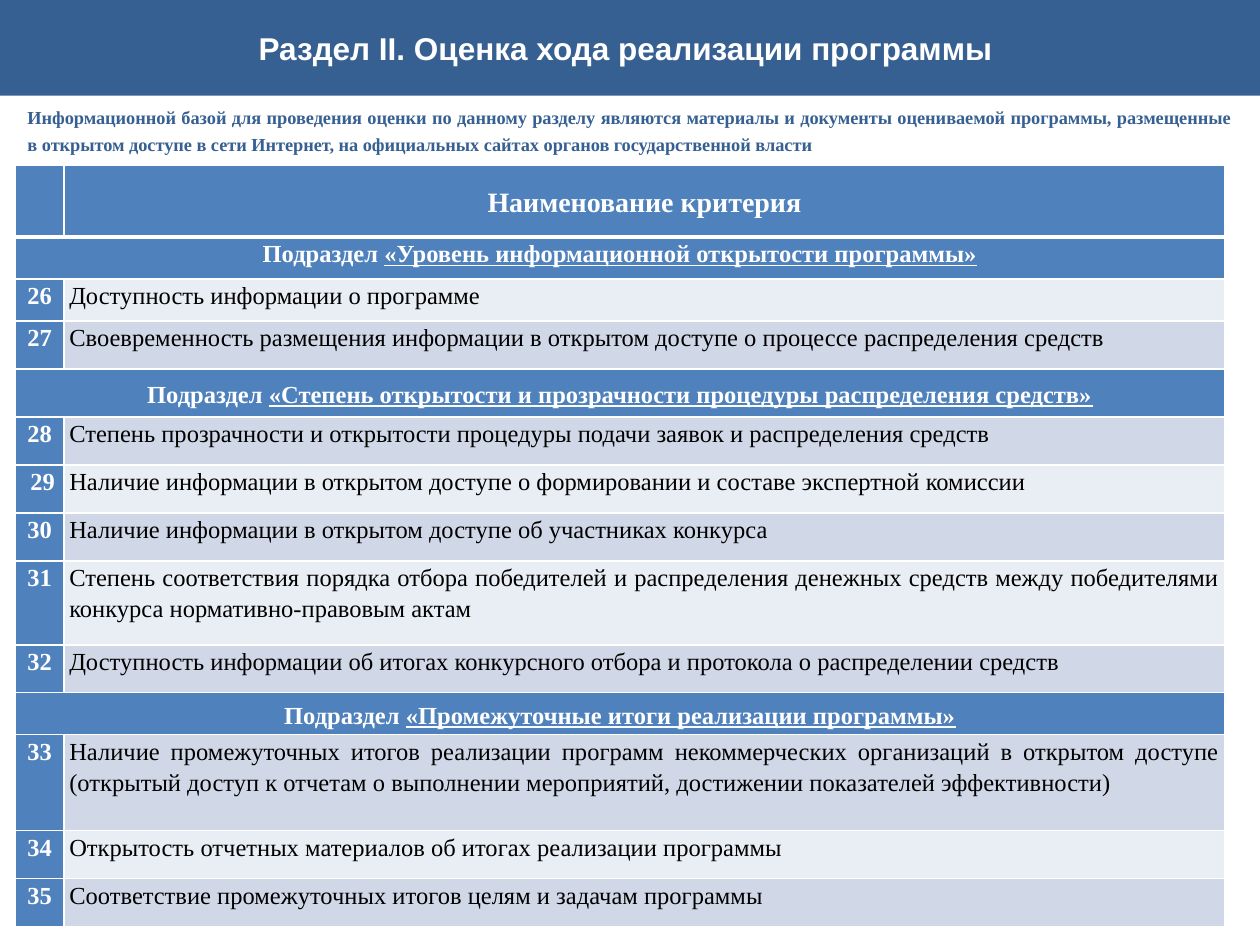
import pptx
import pptx.util
import pptx.dml.color
import pptx.enum.shapes
import pptx.enum.text
import pptx.oxml
import pptx.oxml.ns

Inches, Pt = pptx.util.Inches, pptx.util.Pt
RGBColor = pptx.dml.color.RGBColor
ALIGN, ANCHOR = pptx.enum.text.PP_ALIGN, pptx.enum.text.MSO_ANCHOR

NAVY = RGBColor(0x37, 0x60, 0x92)
BLUE = RGBColor(0x4F, 0x81, 0xBD)
PALE = RGBColor(0xE9, 0xED, 0xF4)
MIST = RGBColor(0xD0, 0xD8, 0xE8)
WHITE = RGBColor(0xFF, 0xFF, 0xFF)
BLACK = RGBColor(0, 0, 0)

SERIF = "Times New Roman"
ROW_UNIT = 1 / 21  # inches; row heights are whole numbers of these
HEADER_UNITS = 12

# Subsections: (name, row units, anchor, paragraph spacing, criteria)
# Criteria: (number, wording, row units)
SUBSECTIONS = [
    ("«Уровень информационной открытости программы»", 7, ANCHOR.TOP, 12, [
        ("26", "Доступность информации о программе", 7),
        ("27", "Своевременность размещения информации в открытом доступе о процессе "
               "распределения средств", 8),
    ]),
    ("«Степень открытости и прозрачности процедуры распределения средств»", 8, ANCHOR.MIDDLE, 10, [
        ("28", "Степень прозрачности и открытости процедуры подачи заявок и распределения средств", 8),
        (" 29", "Наличие информации в открытом доступе о формировании и составе экспертной комиссии", 8),
        ("30", "Наличие информации в открытом доступе об участниках конкурса", 8),
        ("31", "Степень соответствия порядка отбора победителей и распределения денежных средств "
               "между победителями конкурса нормативно-правовым актам", 14),
        ("32", "Доступность информации об итогах конкурсного отбора и протокола о распределении средств", 8),
    ]),
    ("«Промежуточные итоги реализации программы»", 7, ANCHOR.MIDDLE, 12, [
        ("33", "Наличие промежуточных итогов реализации программ некоммерческих организаций "
               "в открытом доступе (открытый доступ к отчетам о выполнении мероприятий, "
               "достижении показателей эффективности)", 16),
        ("34", "Открытость отчетных материалов об итогах реализации программы", 8),
        ("35", "Соответствие промежуточных итогов целям и задачам программы", 8),
    ]),
]


def apply(target, values):
    for name, value in values.items():
        setattr(target, name, value)


def write(paragraph, runs, size, color, font=SERIF, bold=True, **layout):
    """Fill a paragraph with (text, underlined) runs of one style."""
    apply(paragraph, layout)
    for text, underlined in runs:
        run = paragraph.add_run()
        run.text = text
        apply(run.font, {"name": font, "size": Pt(size), "bold": bold, "underline": underlined})
        run.font.color.rgb = color


def add_title_band(slide, box):
    band = slide.shapes.add_shape(pptx.enum.shapes.MSO_SHAPE.RECTANGLE, *box)
    band.shadow.inherit = False
    band.fill.solid()
    band.fill.fore_color.rgb = NAVY
    band.line.fill.background()
    band.text_frame.vertical_anchor = ANCHOR.MIDDLE
    write(band.text_frame.paragraphs[0],
          [("Раздел II. Оценка хода реализации программы ", False)],
          18, WHITE, font="Arial", alignment=ALIGN.CENTER)


def add_lead(slide, box):
    lead = slide.shapes.add_textbox(*box).text_frame
    lead.word_wrap = True
    write(lead.paragraphs[0],
          [("Информационной базой для проведения оценки по данному разделу являются материалы "
            "и документы оцениваемой программы, размещенные в открытом доступе в сети Интернет, "
            "на официальных сайтах органов государственной власти", False)],
          10.5, NAVY, alignment=ALIGN.JUSTIFY, line_spacing=1.2, space_before=Pt(2.1))


def style_cell(cell, fill, top=1, bottom=1):
    """White borders first, then the fill, as the schema orders them."""
    properties = cell._tc.get_or_add_tcPr()
    for side, width in {"L": 1, "R": 1, "T": top, "B": bottom}.items():
        properties.append(pptx.oxml.parse_xml(
            f'<a:ln{side} {pptx.oxml.ns.nsdecls("a")} w="{Pt(width)}">'
            f'<a:solidFill><a:srgbClr val="{WHITE}"/></a:solidFill></a:ln{side}>'))
    cell.fill.solid()
    cell.fill.fore_color.rgb = fill
    apply(cell, {"margin_left": Inches(0.04), "margin_right": Inches(0.04),
                 "margin_top": 0, "margin_bottom": 0})


def fill_cell(cell, runs, size=14, color=WHITE, anchor=ANCHOR.TOP, alignment=ALIGN.CENTER, **style):
    cell.vertical_anchor = anchor
    write(cell.text_frame.paragraphs[0], runs, size, color,
          alignment=alignment, line_spacing=1.15, **style)


def add_criteria_table(slide, box):
    left, top, width = box
    units = [HEADER_UNITS]
    for _, height, _, _, criteria in SUBSECTIONS:
        units += [height] + [criterion[2] for criterion in criteria]
    table = slide.shapes.add_table(len(units), 2, left, top, width,
                                   Inches(sum(units) * ROW_UNIT)).table
    number_width = Inches(0.39)
    table.columns[0].width = number_width
    table.columns[1].width = width - number_width
    for row, height in zip(table.rows, units):
        row.height = Inches(height * ROW_UNIT)

    # Header row, set off by a thick rule
    for cell in table.rows[0].cells:
        style_cell(cell, BLUE, bottom=3)
    fill_cell(table.cell(0, 1), [("Наименование критерия", False)], size=16, anchor=ANCHOR.MIDDLE)

    row = 1
    for name, _, anchor, gap, criteria in SUBSECTIONS:
        # Subsection heading across both columns
        heading = table.cell(row, 0)
        for cell in table.rows[row].cells:
            style_cell(cell, BLUE, top=3 if row == 1 else 1)
        heading.merge(table.cell(row, 1))
        fill_cell(heading, [("Подраздел ", False), (name, True)], anchor=anchor,
                  space_before=Pt(gap), space_after=Pt(gap))
        row += 1

        # Numbered criteria with banded wording
        for number, wording, _ in criteria:
            number_cell, wording_cell = table.cell(row, 0), table.cell(row, 1)
            style_cell(number_cell, BLUE)
            style_cell(wording_cell, MIST if row % 2 else PALE)
            fill_cell(number_cell, [(number, False)])
            fill_cell(wording_cell, [(wording, False)], color=BLACK, bold=False,
                      alignment=ALIGN.JUSTIFY)
            row += 1


def main():
    deck = pptx.Presentation()
    deck.slide_width, deck.slide_height = Inches(10), Inches(7.5)
    slide = deck.slides.add_slide(deck.slide_layouts[6])
    margin, band_height = Inches(0.12), Inches(0.76)
    add_title_band(slide, (0, 0, deck.slide_width, band_height))
    add_lead(slide, (margin, band_height, deck.slide_width - 2 * margin, Inches(0.63)))
    add_criteria_table(slide, (margin, Inches(1.31), Inches(9.6)))
    deck.save("out.pptx")


if __name__ == "__main__":
    main()
